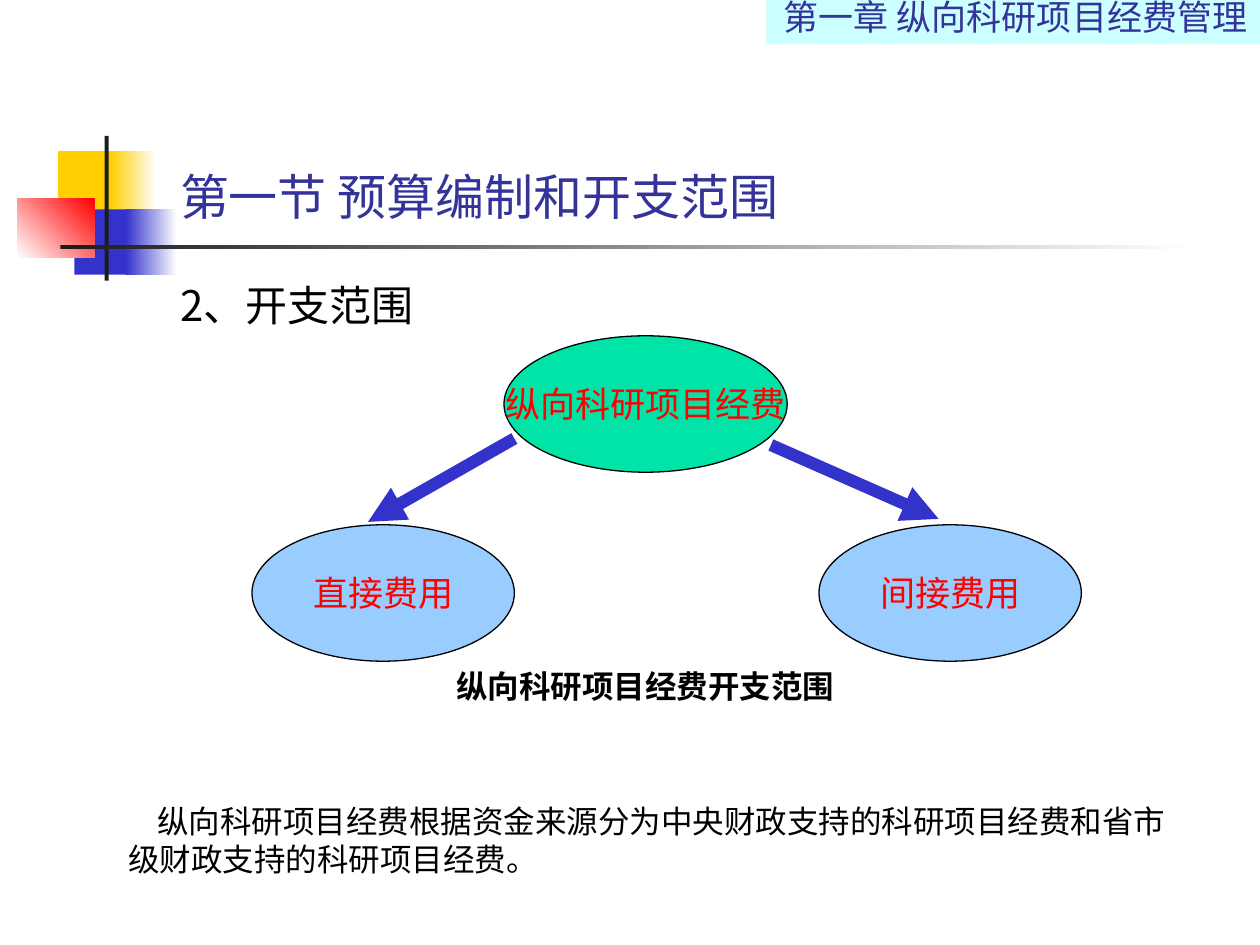
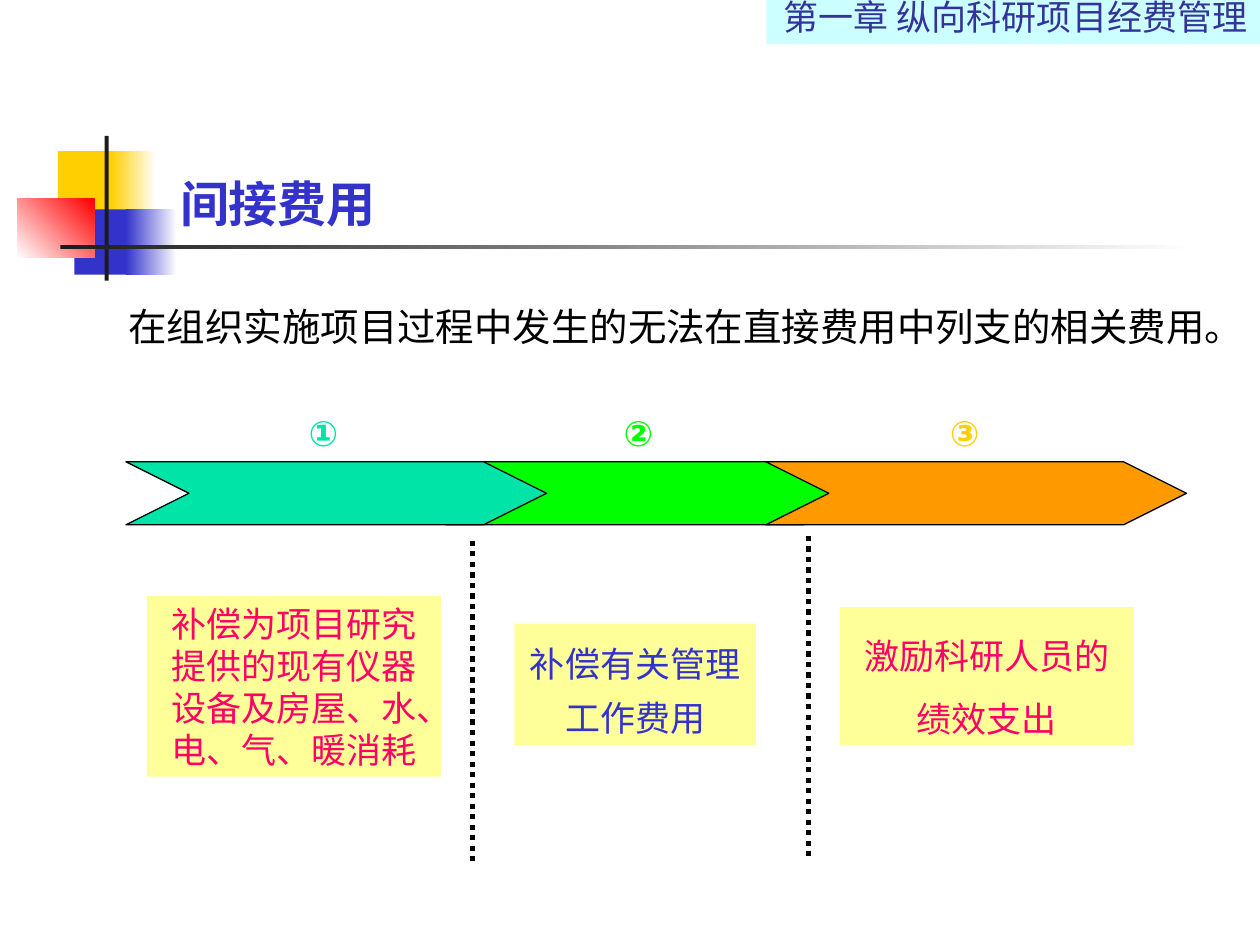
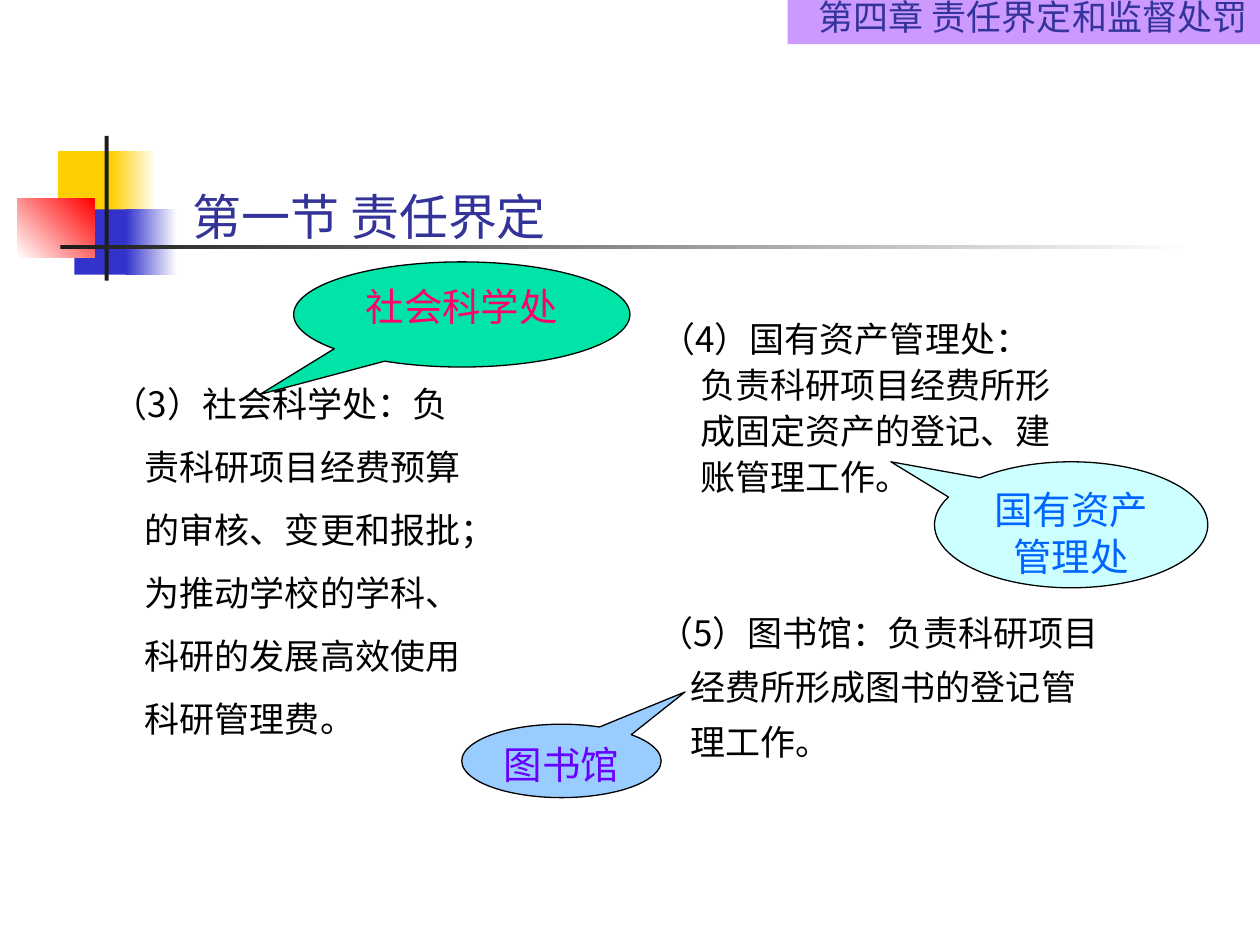
from lxml.etree import SubElement
from pptx import Presentation
from pptx.dml.color import RGBColor
from pptx.enum.dml import MSO_LINE
from pptx.enum.shapes import MSO_CONNECTOR, MSO_SHAPE
from pptx.enum.text import MSO_ANCHOR, PP_ALIGN
from pptx.oxml.ns import qn
from pptx.util import Cm, Pt

CABIN, NOTO = "Cabin", "Noto Sans CJK SC"
BLACK, WHITE, DARK = "000000", "FFFFFF", "1C1C1C"
NAVY, BLUE, RED, PINK = "333399", "3333CC", "FF0000", "FF0066"
GOLD, TEAL, GREEN, ORANGE = "FFCF01", "00E4A8", "00FF00", "FF9900"
SKY, AQUA, LILAC, CREAM = "99CCFF", "CCFFFF", "CC99FF", "FFFF99"
LEFT, CENTER, RIGHT = PP_ALIGN.LEFT, PP_ALIGN.CENTER, PP_ALIGN.RIGHT
HANG = 0.97


def paint(color, code):
    color.rgb = RGBColor.from_string(code)


def write(frame, text, size, code, font=CABIN, bold=False, align=LEFT, wrap=True,
          anchor=MSO_ANCHOR.TOP, space=1, gap=0, margin=0, indent=0):
    frame.word_wrap = wrap
    frame.vertical_anchor = anchor
    para = frame.paragraphs[0]
    para.alignment = align
    para.line_spacing = Pt(round(size * 1.2 * space, 1))
    para.space_before = Pt(gap)
    props = para._p.get_or_add_pPr()
    props.set("marL", str(Cm(margin)))
    props.set("indent", str(Cm(indent)))
    run = para.add_run()
    run.text = text
    run.font.size = Pt(size)
    run.font.bold = bold
    run.font.name = font
    paint(run.font.color, code)
    SubElement(run._r.get_or_add_rPr(), qn("a:ea"), typeface=font)


def label(slide, box, text, size, code, **style):
    item = slide.shapes.add_textbox(*map(Cm, box))
    write(item.text_frame, text, size, code, **style)


def shape(slide, kind, box, fill, line=None, adjust=()):
    item = slide.shapes.add_shape(kind, *map(Cm, box))
    item.shadow.inherit = False
    item.fill.solid()
    paint(item.fill.fore_color, fill)
    if line:
        paint(item.line.color, line)
        item.line.width = Pt(0.75)
    else:
        item.line.fill.background()
    for place, value in enumerate(adjust):
        item.adjustments[place] = value
    return item


def fade(slide, box, first, last, angle=0):
    fill = shape(slide, MSO_SHAPE.RECTANGLE, box, first).fill
    fill.gradient()
    fill.gradient_angle = angle
    for stop, code in zip(fill.gradient_stops, (first, last)):
        paint(stop.color, code)


def stroke(slide, ends, code, width, arrow=False, dash=None):
    item = slide.shapes.add_connector(MSO_CONNECTOR.STRAIGHT, *map(Cm, ends))
    paint(item.line.color, code)
    item.line.width = Pt(width)
    if dash:
        item.line.dash_style = dash
    props = item.element.spPr
    if arrow:
        SubElement(props.find(qn("a:ln")), qn("a:tailEnd"), type="triangle")
    SubElement(props, qn("a:effectLst"))


def oval(slide, box, fill, text):
    item = shape(slide, MSO_SHAPE.OVAL, box, fill, BLACK)
    write(item.text_frame, text, 20, RED, align=CENTER, wrap=False,
          anchor=MSO_ANCHOR.MIDDLE)


def callout(slide, box, tip, fill, text, code, wrap=True):
    item = shape(slide, MSO_SHAPE.OVAL_CALLOUT, box, fill, BLACK, tip)
    write(item.text_frame, text, 22, code, align=CENTER, wrap=wrap)


def motif(slide):
    block = MSO_SHAPE.RECTANGLE
    shape(slide, block, (1.17, 3.05, 1.22, 1.32), GOLD)
    fade(slide, (2.24, 3.05, 0.91, 1.32), GOLD, WHITE)
    shape(slide, block, (1.5, 4.22, 1.17, 1.32), BLUE)
    fade(slide, (2.54, 4.22, 1.02, 1.32), BLUE, WHITE)
    fade(slide, (0.35, 4.01, 1.55, 1.18), WHITE, RED, 45)
    shape(slide, block, (2.11, 2.74, 0.08, 2.92), DARK)
    fade(slide, (1.22, 4.94, 22.86, 0.09), DARK, WHITE)


def page(deck, chapter, left, fill):
    slide = deck.slides.add_slide(deck.slide_layouts[6])
    motif(slide)
    band = shape(slide, MSO_SHAPE.RECTANGLE, (left, 0, 25.4 - left, 0.89), fill)
    write(band.text_frame, chapter, 20, NAVY, align=RIGHT, anchor=MSO_ANCHOR.BOTTOM)
    return slide


def title(slide, left, top, text, code=NAVY, font=CABIN, bold=False):
    label(slide, (left, top, 20, 1.45), text, 28, code, font=font, bold=bold)


def scope(deck, chapter):
    slide = page(deck, chapter, 15.45, AQUA)
    title(slide, 3.38, 3.24, "第一节 预算编制和开支范围", font=NOTO)
    label(slide, (3.38, 5.51, 21.59, 1.4), "2、开支范围", 24, BLACK,
          font=NOTO, gap=4.8, margin=HANG, indent=-HANG)
    oval(slide, (10.16, 6.77, 5.71, 2.75), TEAL, "纵向科研项目经费")
    for left, text in ((5.08, "直接费用"), (16.51, "间接费用")):
        oval(slide, (left, 10.58, 5.29, 2.75), SKY, text)
    for ends in ((10.37, 8.84, 7.42, 10.52), (15.54, 8.97, 18.92, 10.46)):
        stroke(slide, ends, BLUE, 7, arrow=True)
    label(slide, (8.95, 13.33, 8.4, 1.02), "纵向科研项目经费开支范围", 18, BLACK,
          bold=True, gap=3.6)
    label(slide, (2.34, 16.05, 21.59, 1.78),
          "纵向科研项目经费根据资金来源分为中央财政支持的科研项目经费和省市级财政支持的科研项目经费。",
          18, BLACK, font=NOTO, anchor=MSO_ANCHOR.MIDDLE, indent=0.58)


def costs(deck, chapter):
    slide = page(deck, chapter, 15.45, AQUA)
    title(slide, 3.38, 3.38, "间接费用", BLUE, bold=True)
    label(slide, (2.34, 5.51, 22.43, 3.18),
          "在组织实施项目过程中发生的无法在直接费用中列支的相关费用。", 22, BLACK,
          font=NOTO, space=1.5, gap=4.4, margin=HANG, indent=-HANG)
    for step, fill in ((1, GREEN), (0, TEAL), (2, ORANGE)):
        shape(slide, MSO_SHAPE.CHEVRON, (2.54 + step * 6.45, 9.31, 8.48, 1.27),
              fill, BLACK, (1,))
    for left, text, code in ((5.97, "①", TEAL), (12.32, "②", GREEN), (18.9, "③", GOLD)):
        label(slide, (left, 8.18, 1.22, 1.09), text, 20, code, bold=True, wrap=False)
    notes = (
        ((2.96, 12.02, 5.93, 3.64), "补偿为项目研究提供的现有仪器设备及房屋、水、电、气、暖消耗", PINK, 1, 0),
        ((10.37, 12.57, 4.87, 2.46), "补偿有关管理工作费用", BLUE, 1.3, 0),
        ((16.93, 12.24, 5.93, 2.79), "激励科研人员的绩效支出", PINK, 1.5, 4),
    )
    for box, text, code, space, gap in notes:
        note = shape(slide, MSO_SHAPE.RECTANGLE, box, CREAM)
        write(note.text_frame, text, 20, code, align=CENTER, space=space, gap=gap)
    for left, top in ((9.53, 10.9), (16.3, 10.8)):
        stroke(slide, (left, top, left, top + 6.55), BLACK, 3, dash=MSO_LINE.ROUND_DOT)


def duties(deck):
    slide = page(deck, "第四章 责任界定和监督处罚", 15.88, LILAC)
    title(slide, 3.63, 3.63, "第一节 责任界定")
    tasks = (
        ((1.7, 7.16, 8.26, 8.26), 1.5, -0.65,
         "（3）社会科学处：负责科研项目经费预算的审核、变更和报批；为推动学校的学科、科研的发展高效使用科研管理费。"),
        ((12.9, 6.19, 8.69, 4.6), 1.1, -0.81,
         "（4）国有资产管理处：负责科研项目经费所形成固定资产的登记、建账管理工作。"),
        ((12.7, 11.94, 9.73, 4), 1.3, -0.65,
         "（5）图书馆：负责科研项目经费所形成图书的登记管理工作。"),
    )
    for box, space, indent, text in tasks:
        label(slide, box, text, 20, BLACK, font=NOTO, space=space, gap=4,
              margin=HANG, indent=indent)
    callout(slide, (5.92, 5.28, 6.78, 2.12), (-0.6, 0.76), TEAL, "社会科学处", PINK)
    callout(slide, (18.84, 9.31, 5.51, 2.54), (-0.66, -0.5), AQUA,
            "国有资产管理处", "0066FF")
    callout(slide, (9.31, 14.6, 4.02, 1.48), (0.62, -0.94), SKY, "图书馆", "6600FF",
            wrap=False)


def main():
    deck = Presentation()
    deck.slide_width, deck.slide_height = Cm(25.4), Cm(19.05)
    funds = "第一章 纵向科研项目经费管理"
    scope(deck, funds)
    costs(deck, funds)
    duties(deck)
    deck.save("out.pptx")


if __name__ == "__main__":
    main()
